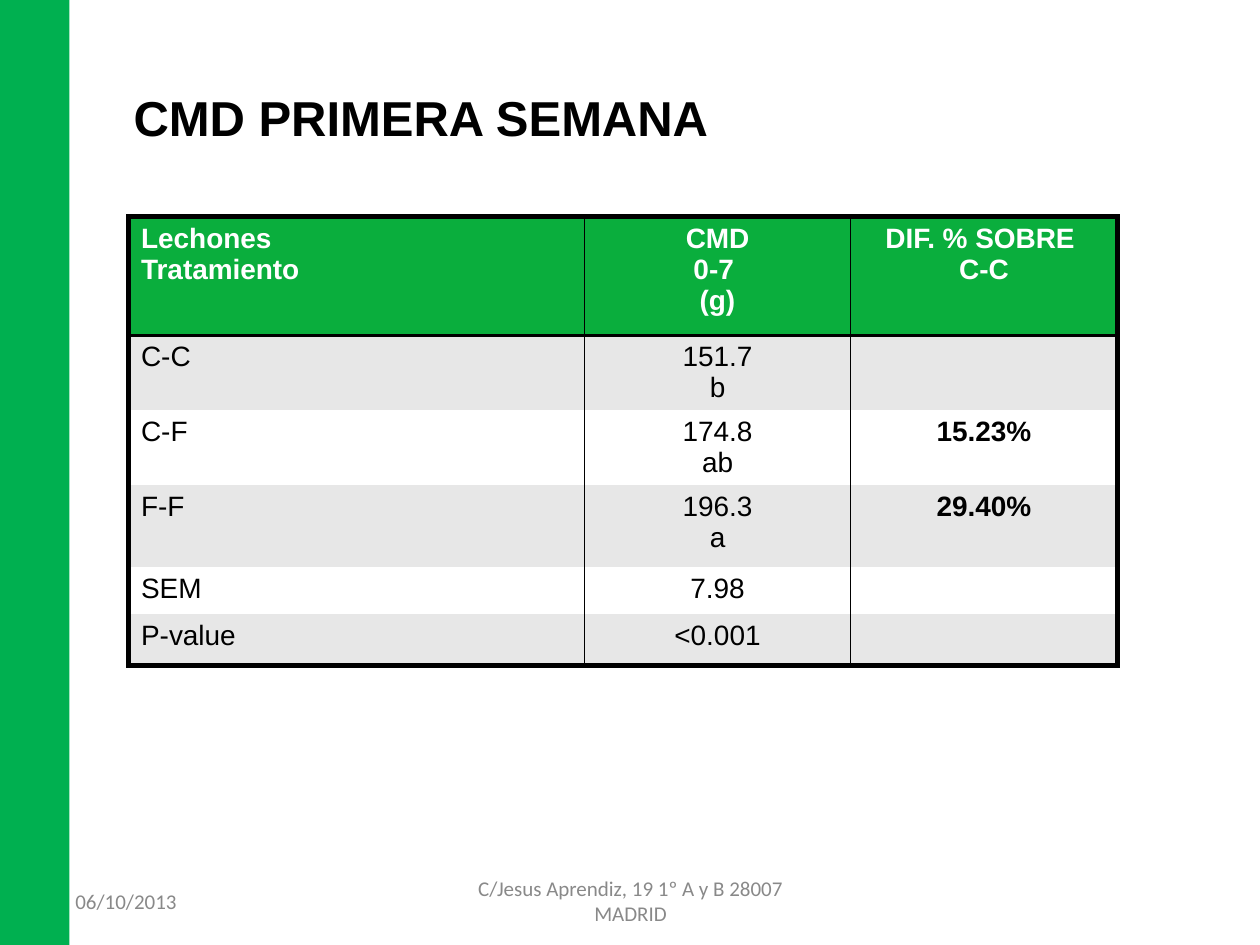
from lxml.etree import SubElement
from pptx import Presentation
from pptx.dml.color import RGBColor
from pptx.enum.shapes import MSO_SHAPE as Shape
from pptx.enum.text import MSO_ANCHOR as Anchor, PP_ALIGN as Align
from pptx.oxml import parse_xml
from pptx.oxml.ns import nsdecls, qn
from pptx.util import Inches, Pt

COLORS = {
    "band": "00B050",
    "header": "0AAE3D",
    "stripe": "E7E7E7",
    "white": "FFFFFF",
    "black": "000000",
    "footer": "898989",
}
COLUMN_WIDTHS = [3.62, 2.11, 2.12]
ROW_HEIGHTS = [0.94, 0.59, 0.59, 0.65, 0.35, 0.41]
ROWS = [
    ["Lechones\nTratamiento", "CMD\n0-7 \n(g)", "DIF. % SOBRE \nC-C"],
    ["C-C", "151.7\nb", ""],
    ["C-F", "174.8\nab", "15.23%"],
    ["F-F", "196.3\na", "29.40%"],
    ["SEM", "7.98", ""],
    ["P-value", "<0.001", ""],
]


def color(name):
    return RGBColor.from_string(COLORS[name])


def write_text(frame, text, size=16, font="Arial", ink="black", bold=False,
               align=Align.LEFT, anchor=Anchor.TOP):
    """Fill a text frame with one paragraph per line of text."""
    frame.word_wrap = True
    frame.vertical_anchor = anchor
    for index, line in enumerate(text.split("\n")):
        para = frame.paragraphs[0] if index == 0 else frame.add_paragraph()
        para.alignment = align
        if not line:
            # An empty cell keeps the text size, so that its row stays low
            SubElement(para._p, qn("a:endParaRPr"), sz=str(size * 100))
            continue
        span = para.add_run()
        span.text = line
        span.font.size = Pt(size)
        span.font.name = font
        span.font.bold = bold
        span.font.color.rgb = color(ink)


def set_borders(cell, **widths):
    """Set border widths in points by side (L, R, T, B); 0 hides a side."""
    properties = cell._tc.get_or_add_tcPr()
    for index, side in enumerate("LRTB"):
        width = widths[side]
        paint = (f'<a:solidFill><a:srgbClr val="{COLORS["black"]}"/></a:solidFill>'
                 if width else "<a:noFill/>")
        line = f'<a:ln{side} {nsdecls("a")} w="{Pt(width)}">{paint}</a:ln{side}>'
        properties.insert(index, parse_xml(line))


def add_band(page):
    band = page.shapes.add_shape(Shape.RECTANGLE, 0, 0, Inches(0.55), Inches(7.5))
    band.shadow.inherit = False
    band.fill.solid()
    band.fill.fore_color.rgb = color("band")
    band.line.fill.background()


def add_title(page, text):
    title = page.shapes.title
    title.left, title.top = Inches(0.96), Inches(0.3)
    title.width, title.height = Inches(9), Inches(1.25)
    write_text(title.text_frame, text, size=28, bold=True, anchor=Anchor.MIDDLE)


def add_results_table(page):
    table = page.shapes.add_table(
        len(ROWS), len(COLUMN_WIDTHS), Inches(1.02), Inches(1.72),
        Inches(sum(COLUMN_WIDTHS)), Inches(sum(ROW_HEIGHTS))).table
    for column, width in zip(table.columns, COLUMN_WIDTHS):
        column.width = Inches(width)
    for row, height in zip(table.rows, ROW_HEIGHTS):
        row.height = Inches(height)

    last_row, last_column = len(ROWS) - 1, len(COLUMN_WIDTHS) - 1
    for r, texts in enumerate(ROWS):
        is_header = r == 0
        fill = "header" if is_header else "stripe" if r % 2 else "white"
        for c, text in enumerate(texts):
            cell = table.cell(r, c)
            cell.fill.solid()
            cell.fill.fore_color.rgb = color(fill)
            write_text(cell.text_frame, text,
                       ink="white" if is_header else "black",
                       bold=is_header or c == last_column,
                       align=Align.CENTER if c else Align.LEFT)
            set_borders(cell,
                        L=3 if c == 0 else 1,
                        R=3 if c == last_column else 1,
                        T={0: 3, 1: 2}.get(r, 0),
                        B={0: 2, last_row: 3}.get(r, 0))


def add_footer(page, text, left, width, align):
    box = page.shapes.add_textbox(Inches(left), Inches(6.95), Inches(width), Inches(0.4))
    write_text(box.text_frame, text, size=12, font="Calibri", ink="footer",
               align=align, anchor=Anchor.MIDDLE)


def main():
    deck = Presentation()
    deck.slide_width, deck.slide_height = Inches(10), Inches(7.5)
    page = deck.slides.add_slide(deck.slide_layouts[5])
    add_band(page)
    add_title(page, "CMD PRIMERA SEMANA")
    add_results_table(page)
    add_footer(page, "C/Jesus Aprendiz, 19 1º A y B 28007 MADRID", 3.42, 3.17, Align.CENTER)
    add_footer(page, "06/10/2013", 0.5, 2.33, Align.LEFT)
    deck.save("out.pptx")


if __name__ == "__main__":
    main()
